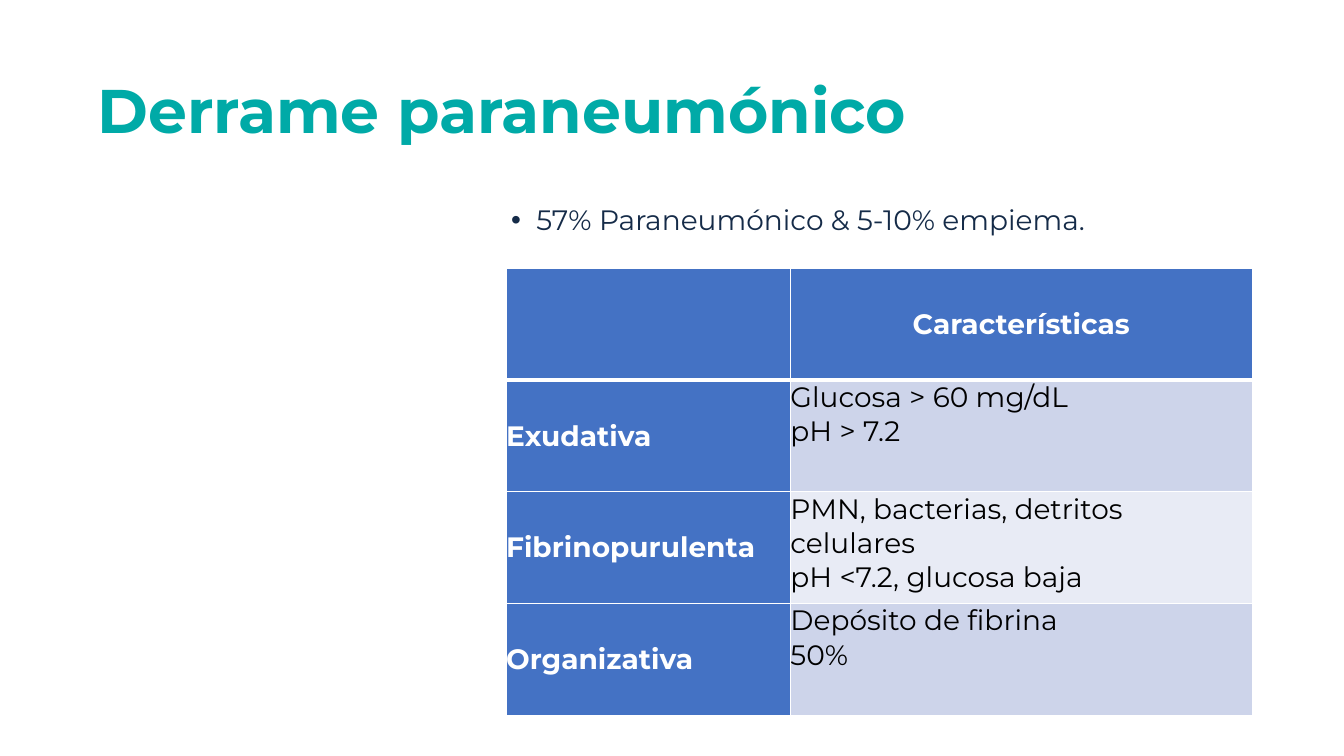
from dataclasses import dataclass

import pptx
import pptx.dml.color
import pptx.enum.text
import pptx.oxml
import pptx.oxml.ns
import pptx.util
from pptx.util import Inches

ANCHOR = pptx.enum.text.MSO_ANCHOR
ALIGN = pptx.enum.text.PP_ALIGN


@dataclass(frozen=True)
class Theme:
    font: str = "Montserrat"
    title_size: int = 44
    text_size: int = 20
    title: str = "00AAA7"
    body: str = "152B48"
    heading: str = "4472C4"
    odd_band: str = "CDD4EA"
    even_band: str = "E8EBF5"
    white: str = "FFFFFF"
    black: str = "000000"
    thin_line: int = 1
    thick_line: int = 3


@dataclass(frozen=True)
class Stage:
    name: str
    features: tuple[str, ...]


THEME = Theme()
STAGES = (
    Stage("Exudativa", ("Glucosa > 60 mg/dL", "pH > 7.2")),
    Stage("Fibrinopurulenta",
          ("PMN, bacterias, detritos celulares", "pH <7.2, glucosa baja")),
    Stage("Organizativa", ("Depósito de fibrina", "50%")),
)


def rgb(color: str) -> pptx.dml.color.RGBColor:
    return pptx.dml.color.RGBColor.from_string(color)


def style(paragraph, color: str, size: int = THEME.text_size, bold: bool = False) -> None:
    font = paragraph.font
    font.name = THEME.font
    font.size = pptx.util.Pt(size)
    font.bold = bold
    font.color.rgb = rgb(color)


def set_frame(frame, anchor) -> None:
    frame.word_wrap = True
    frame.auto_size = pptx.enum.text.MSO_AUTO_SIZE.NONE
    frame.vertical_anchor = anchor
    frame.margin_left = frame.margin_right = Inches(0.05)
    frame.margin_top = frame.margin_bottom = Inches(0.05)


def add_title(slide, text: str) -> None:
    title = slide.shapes.title
    title.left, title.top = Inches(0.92), Inches(0.4)
    title.width, title.height = Inches(11.5), Inches(1.45)
    set_frame(title.text_frame, ANCHOR.MIDDLE)
    title.text_frame.text = text
    paragraph = title.text_frame.paragraphs[0]
    paragraph.alignment = ALIGN.LEFT
    paragraph.line_spacing = 0.9
    style(paragraph, THEME.title, THEME.title_size, bold=True)


def add_incidence(slide, text: str) -> None:
    incidence = slide.shapes.add_textbox(Inches(5.02), Inches(2), Inches(7.39), Inches(0.67))
    set_frame(incidence.text_frame, ANCHOR.TOP)
    paragraph = incidence.text_frame.paragraphs[0]
    paragraph.text = text
    paragraph.line_spacing = 0.9
    properties = paragraph._p.get_or_add_pPr()
    properties.set("marL", str(Inches(0.25)))
    properties.set("indent", str(-Inches(0.25)))
    namespace = pptx.oxml.ns.nsdecls("a")
    properties.append(pptx.oxml.parse_xml(f'<a:buFont {namespace} typeface="Arial"/>'))
    properties.append(pptx.oxml.parse_xml(f'<a:buChar {namespace} char="•"/>'))
    style(paragraph, THEME.body)


def set_borders(cell, top: int, bottom: int) -> None:
    widths = {"lnL": THEME.thin_line, "lnR": THEME.thin_line, "lnT": top, "lnB": bottom}
    for side, width in widths.items():
        cell._tc.get_or_add_tcPr().append(pptx.oxml.parse_xml(
            f'<a:{side} {pptx.oxml.ns.nsdecls("a")} w="{pptx.util.Pt(width)}">'
            f'<a:solidFill><a:srgbClr val="{THEME.white}"/></a:solidFill></a:{side}>'))


def fill_cell(cell, lines: tuple[str, ...], fill: str, heading: bool,
              top: int = THEME.thin_line, bottom: int = THEME.thin_line,
              align=ALIGN.LEFT) -> None:
    set_borders(cell, top, bottom)
    cell.fill.solid()
    cell.fill.fore_color.rgb = rgb(fill)
    cell.margin_left = cell.margin_right = cell.margin_top = cell.margin_bottom = 0
    cell.vertical_anchor = ANCHOR.MIDDLE if heading else ANCHOR.TOP
    cell.text = "\n".join(lines)
    for paragraph in cell.text_frame.paragraphs:
        paragraph.alignment = align
        style(paragraph, THEME.white if heading else THEME.black, bold=heading)


def add_stage_table(slide, stages: tuple[Stage, ...]) -> None:
    row_count = len(stages) + 1
    table = slide.shapes.add_table(row_count, 2, Inches(5.02), Inches(2.66),
                                   Inches(7.4), Inches(1.11 * row_count)).table
    table.columns[0].width, table.columns[1].width = Inches(2.82), Inches(4.58)

    # Header row
    for column, heading in enumerate(("", "Características")):
        fill_cell(table.cell(0, column), (heading,), THEME.heading, heading=True,
                  bottom=THEME.thick_line, align=ALIGN.CENTER)

    # One banded row for each stage
    for row, stage in enumerate(stages, start=1):
        band = THEME.odd_band if row % 2 else THEME.even_band
        top = THEME.thick_line if row == 1 else THEME.thin_line
        fill_cell(table.cell(row, 0), (stage.name,), THEME.heading, heading=True)
        fill_cell(table.cell(row, 1), stage.features, band, heading=False, top=top)


def main() -> None:
    presentation = pptx.Presentation()
    presentation.slide_width, presentation.slide_height = Inches(13.33), Inches(7.5)
    slide = presentation.slides.add_slide(presentation.slide_layouts.get_by_name("Title Only"))
    add_title(slide, "Derrame paraneumónico")
    add_incidence(slide, "57% Paraneumónico & 5-10% empiema.")
    add_stage_table(slide, STAGES)
    presentation.save("out.pptx")


if __name__ == "__main__":
    main()
